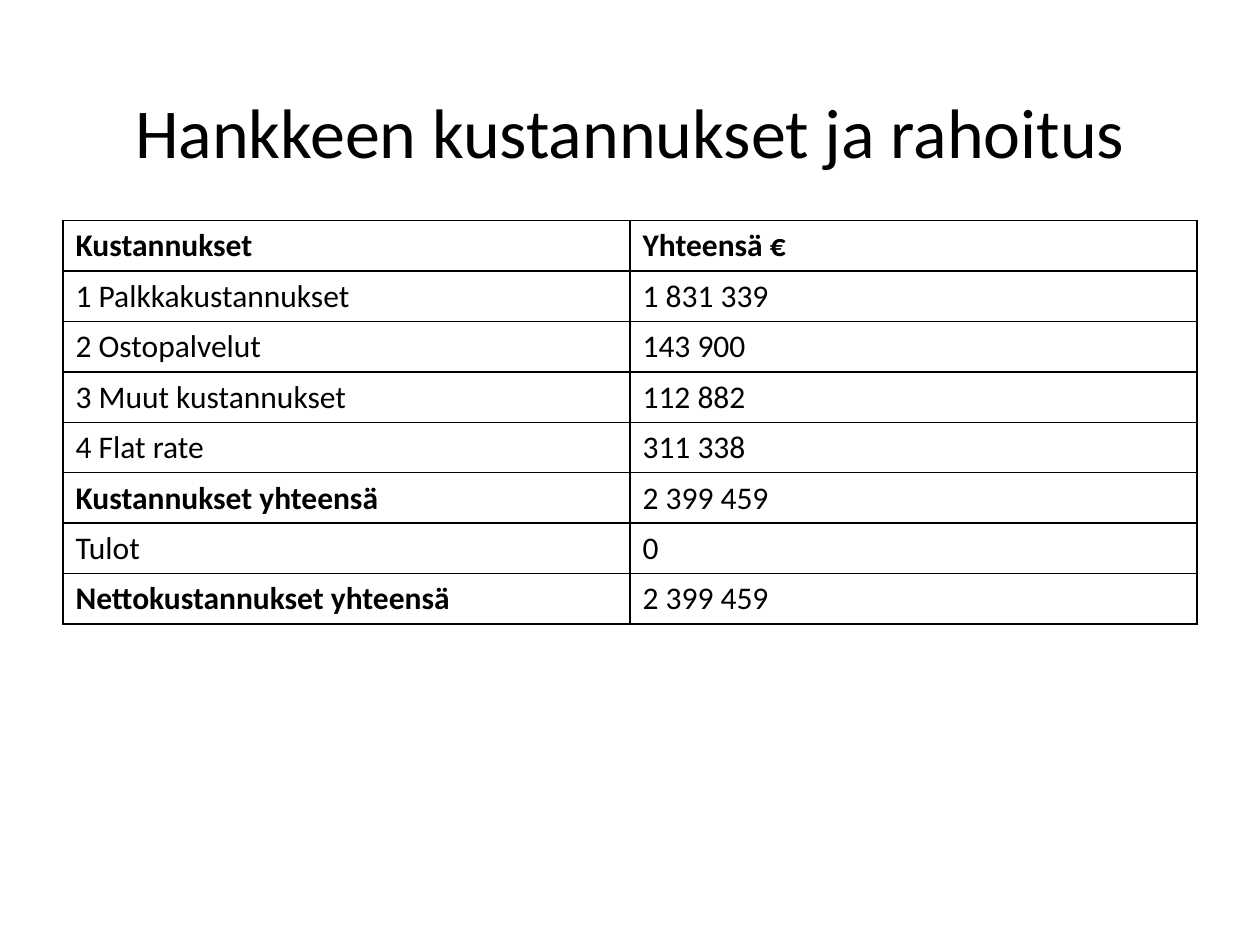
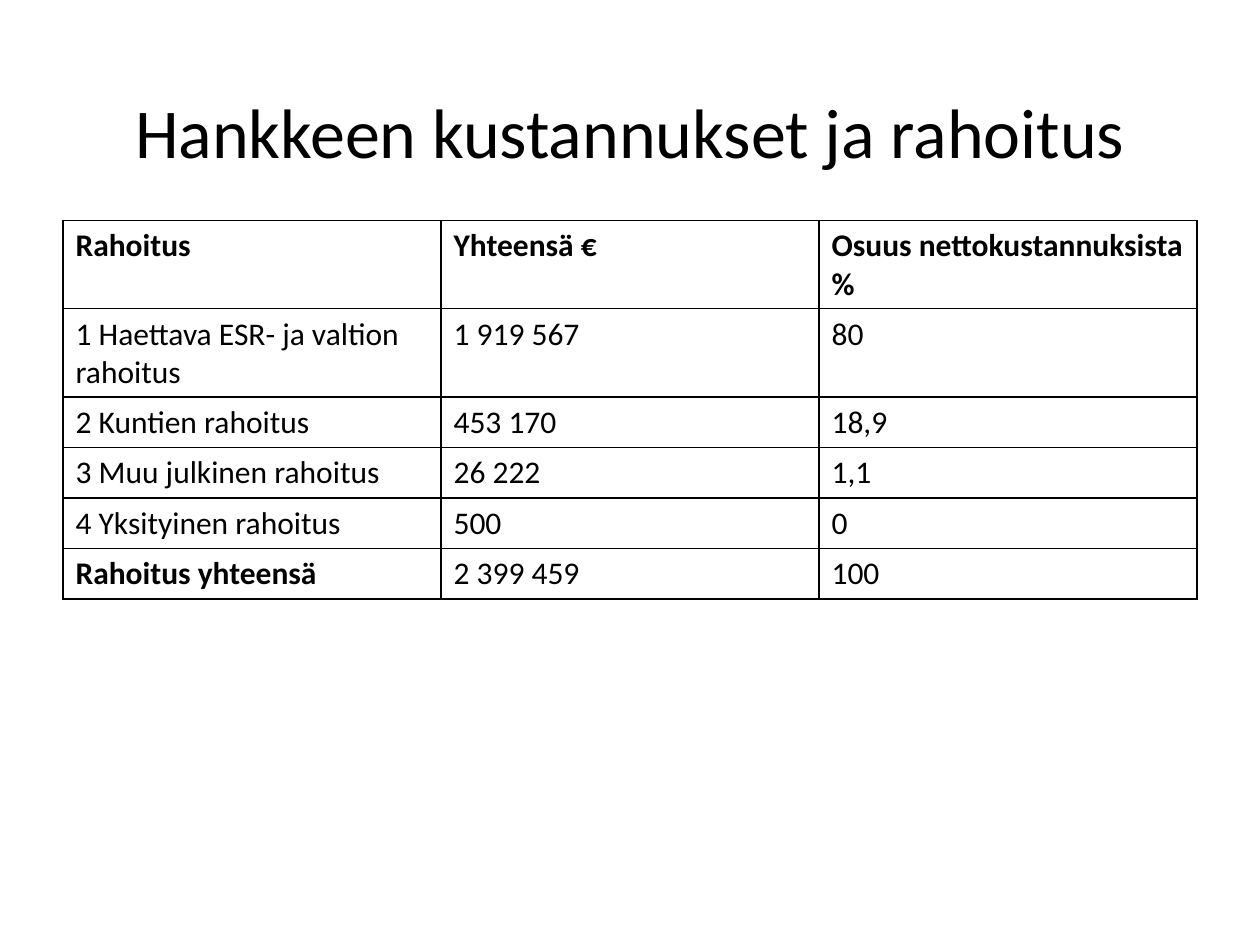
from dataclasses import dataclass

from lxml import etree
from pptx import Presentation
from pptx.dml.color import RGBColor
from pptx.enum.text import MSO_ANCHOR, PP_ALIGN
from pptx.oxml.ns import qn
from pptx.util import Inches, Pt

MIDDLE = MSO_ANCHOR.MIDDLE
LEFT, CENTER = PP_ALIGN.LEFT, PP_ALIGN.CENTER


@dataclass(frozen=True)
class Theme:
    font: str = "Calibri"
    ink: str = "000000"
    title_size: int = 40
    table_size: int = 18
    border_width: int = 1


theme = Theme()


def write(frame, text, size=theme.table_size, bold=False, align=LEFT):
    """Put one formatted paragraph into a text frame."""
    frame.word_wrap = True
    para = frame.paragraphs[0]
    para.alignment = align
    span = para.add_run()
    span.text = text
    span.font.name = theme.font
    span.font.size = Pt(size)
    span.font.bold = bold
    span.font.color.rgb = RGBColor.from_string(theme.ink)


def add_borders(cell):
    """Draw a solid line on all four sides of a cell."""
    properties = cell._tc.get_or_add_tcPr()
    for position, side in enumerate(("a:lnL", "a:lnR", "a:lnT", "a:lnB")):
        line = etree.Element(qn(side), w=str(Pt(theme.border_width)))
        fill = etree.SubElement(line, qn("a:solidFill"))
        etree.SubElement(fill, qn("a:srgbClr"), val=theme.ink)
        properties.insert(position, line)


# Content shared by the slides, then one table for each slide
title = "Hankkeen kustannukset ja rahoitus"
total_labels = {"Kustannukset yhteensä", "Nettokustannukset yhteensä", "Rahoitus yhteensä"}

costs = [
    ("Kustannukset", "Yhteensä €"),
    ("1 Palkkakustannukset", "1 831 339"),
    ("2 Ostopalvelut", "143 900"),
    ("3 Muut kustannukset", "112 882"),
    ("4 Flat rate", "311 338"),
    ("Kustannukset yhteensä", "2 399 459"),
    ("Tulot", "0"),
    ("Nettokustannukset yhteensä", "2 399 459"),
]
funding = [
    ("Rahoitus", "Yhteensä €", "Osuus nettokustannuksista %"),
    ("1 Haettava ESR- ja valtion rahoitus", "1 919 567", "80"),
    ("2 Kuntien rahoitus", "453 170", "18,9"),
    ("3 Muu julkinen rahoitus", "26 222", "1,1"),
    ("4 Yksityinen rahoitus", "500", "0"),
    ("Rahoitus yhteensä", "2 399 459", "100"),
]

# Measures in inches
margin, content_width = 0.5, 9
title_top, title_height = 0.52, 1.03
table_top, row_height = 1.75, 0.4

deck = Presentation()
deck.slide_width, deck.slide_height = Inches(10), Inches(7.5)
blank_layout = deck.slide_layouts[6]

for rows in (costs, funding):
    page = deck.slides.add_slide(blank_layout)

    # Title
    box = page.shapes.add_textbox(
        Inches(margin), Inches(title_top), Inches(content_width), Inches(title_height))
    box.text_frame.vertical_anchor = MIDDLE
    write(box.text_frame, title, size=theme.title_size, align=CENTER)

    # Table with equal columns
    table = page.shapes.add_table(
        len(rows), len(rows[0]), Inches(margin), Inches(table_top),
        Inches(content_width), Inches(row_height * len(rows))).table
    table.first_row = table.horz_banding = False

    for row_index, values in enumerate(rows):
        for column_index, value in enumerate(values):
            cell = table.cell(row_index, column_index)
            cell.fill.background()
            add_borders(cell)
            write(cell.text_frame, value, bold=row_index == 0 or value in total_labels)

deck.save("out.pptx")
